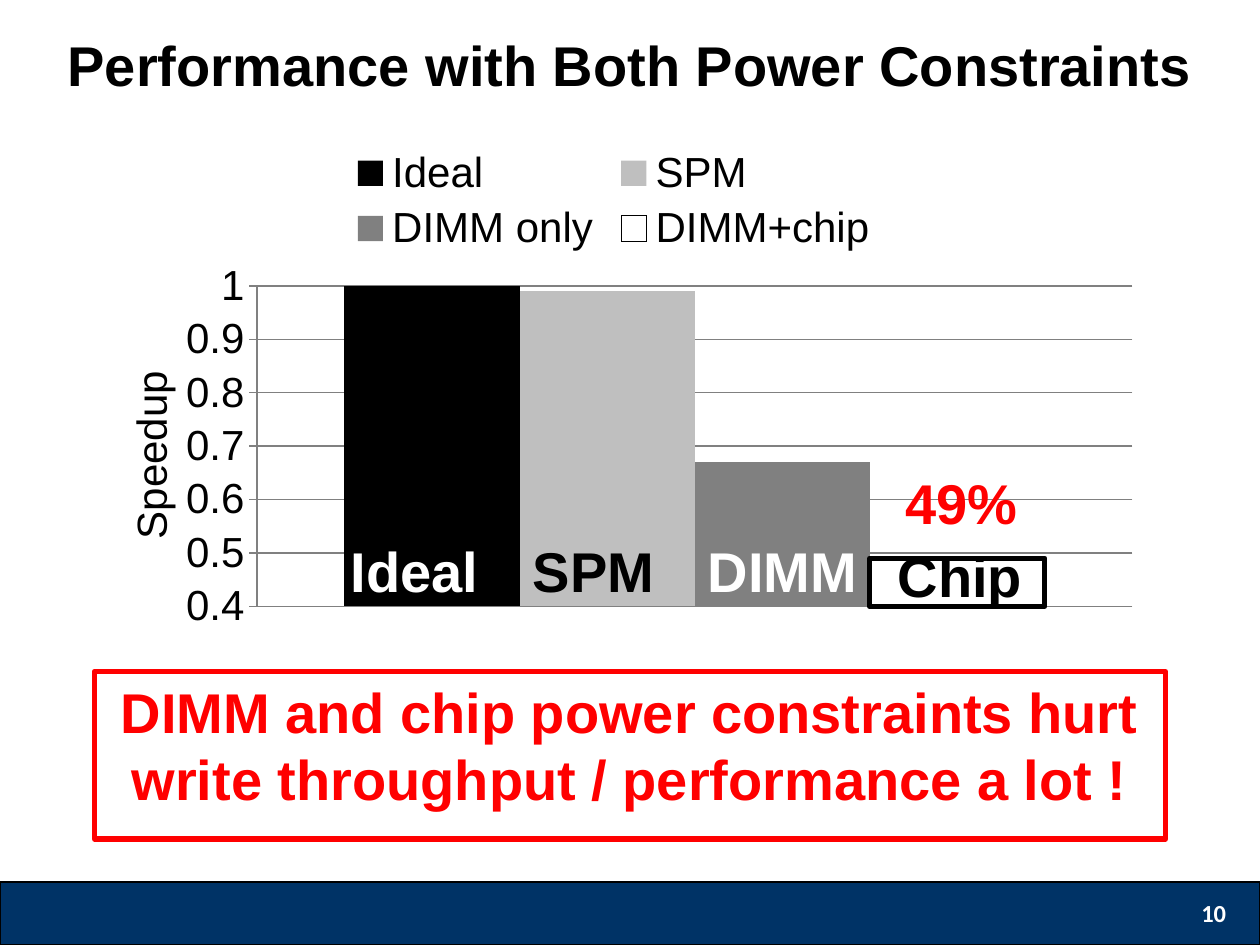
from lxml import etree
from pptx import Presentation
from pptx.chart.data import CategoryChartData
from pptx.dml.color import RGBColor
from pptx.enum.chart import XL_CHART_TYPE, XL_LEGEND_POSITION, XL_TICK_MARK
from pptx.enum.shapes import MSO_SHAPE
from pptx.enum.text import MSO_ANCHOR, PP_ALIGN
from pptx.oxml.ns import qn
from pptx.util import Inches, Pt

COLUMNS = XL_CHART_TYPE.COLUMN_CLUSTERED
LEGEND_TOP = XL_LEGEND_POSITION.TOP
CROSS = XL_TICK_MARK.CROSS
RECTANGLE = MSO_SHAPE.RECTANGLE
TOP, MIDDLE = MSO_ANCHOR.TOP, MSO_ANCHOR.MIDDLE
CENTER, RIGHT = PP_ALIGN.CENTER, PP_ALIGN.RIGHT

BLACK, WHITE, RED, NAVY, GRAY = "000000", "FFFFFF", "FF0000", "003366", "808080"
SPEEDUPS = [
    ("Ideal", 1, BLACK),
    ("SPM", 0.99, "BFBFBF"),
    ("DIMM only", 0.67, GRAY),
    ("DIMM+chip", 0.49, WHITE),
]
BAR_LABELS = [
    ("49%", RED, (6.92, 3.67, 1.42, 0.64)),
    ("Ideal", WHITE, (2.5, 4.21, 1.58, 0.64)),
    ("SPM", BLACK, (3.92, 4.21, 1.58, 0.64)),
    ("DIMM", WHITE, (5.42, 4.21, 1.58, 0.64)),
    ("Chip", BLACK, (6.83, 4.25, 1.58, 0.64)),
]


def color(value):
    return RGBColor.from_string(value)


def inches(box):
    return [Inches(length) for length in box]


def style_font(font, size, shade, bold=False, name="Arial"):
    font.name = name
    font.size = Pt(size)
    font.bold = bold
    font.color.rgb = color(shade)


def write(frame, text, shade, size=32, align=CENTER, anchor=TOP, name="Arial"):
    frame.word_wrap = True
    frame.vertical_anchor = anchor
    paragraph = frame.paragraphs[0]
    paragraph.text = text
    paragraph.alignment = align
    style_font(paragraph.font, size, shade, True, name)


def add_label(slide, box, text, shade, **style):
    label = slide.shapes.add_textbox(*inches(box))
    write(label.text_frame, text, shade, **style)


def add_panel(slide, box, fill, line, width):
    panel = slide.shapes.add_shape(RECTANGLE, *inches(box))
    panel.shadow.inherit = False
    panel.fill.solid()
    panel.fill.fore_color.rgb = color(fill)
    panel.line.color.rgb = color(line)
    panel.line.width = Pt(width)
    return panel


def set_layout(parent, index, **settings):
    for old in parent.findall(qn("c:layout")):
        parent.remove(old)
    layout = etree.Element(qn("c:layout"))
    manual = etree.SubElement(layout, qn("c:manualLayout"))
    for tag, value in settings.items():
        etree.SubElement(manual, qn(f"c:{tag}")).set("val", str(value))
    parent.insert(index, layout)


def add_speedup_chart(slide, box):
    data = CategoryChartData()
    data.categories = ["1"]
    for name, speedup, _ in SPEEDUPS:
        data.add_series(name, [speedup])
    chart = slide.shapes.add_chart(COLUMNS, *inches(box), data).chart
    style_font(chart.font, 24, BLACK)
    chart.has_title = False

    chart.has_legend = True
    legend = chart.legend
    legend.position = LEGEND_TOP
    legend.include_in_layout = False
    style_font(legend.font, 24, BLACK)

    plot = chart.plots[0]
    plot.gap_width = 100
    plot.overlap = 0
    plot.vary_by_categories = False
    for series, (_, _, shade) in zip(plot.series, SPEEDUPS):
        series.format.fill.solid()
        series.format.fill.fore_color.rgb = color(shade)
    outline = plot.series[-1].format.line
    outline.color.rgb = color(BLACK)
    outline.width = Pt(3)

    chart.category_axis.visible = False
    axis = chart.value_axis
    axis.minimum_scale, axis.maximum_scale, axis.major_unit = 0.4, 1, 0.1
    axis.major_tick_mark = CROSS
    axis.tick_labels.number_format = "General"
    axis.tick_labels.number_format_is_linked = False
    style_font(axis.tick_labels.font, 24, BLACK)
    axis.has_major_gridlines = True
    for rule in (axis.format.line, axis.major_gridlines.format.line):
        rule.color.rgb = color(GRAY)
        rule.width = Pt(0.75)
    title = axis.axis_title
    title.text_frame.text = "Speedup"
    style_font(title.text_frame.paragraphs[0].font, 24, BLACK)

    edges = {"xMode": "edge", "yMode": "edge"}
    plot_area = chart._chartSpace.chart.plotArea
    set_layout(plot_area, 0, layoutTarget="inner", **edges, x=0.17, y=0.31, w=0.81, h=0.62)
    set_layout(legend._element, 1, **edges, x=0.25, y=0.03, w=0.5, h=0.23)
    set_layout(title._element, 1, **edges, x=0.04, y=0.46)


def add_conclusion(slide, box):
    panel = add_panel(slide, box, WHITE, RED, 3)
    write(
        panel.text_frame,
        "DIMM and chip power constraints hurt write throughput / performance a lot !",
        RED,
    )


def add_footer(slide, box):
    left, top, width, _ = box
    add_panel(slide, box, NAVY, BLACK, 0.75)
    number_box = (left + width - 2.5, top + 0.08, 2.33, 0.4)
    add_label(slide, number_box, "10", WHITE, size=14, align=RIGHT, name="Calibri")


def main():
    deck = Presentation()
    deck.slide_width, deck.slide_height = Inches(10), Inches(7.5)
    slide = deck.slides.add_slide(deck.slide_layouts[6])
    add_footer(slide, (0, 7, 10, 0.5))
    add_speedup_chart(slide, (0.58, 1, 8.58, 4.1))
    add_label(
        slide,
        (0.25, 0.17, 9.5, 0.67),
        "Performance with Both Power Constraints",
        BLACK,
        anchor=MIDDLE,
    )
    add_conclusion(slide, (0.75, 5.33, 8.5, 1.33))
    for text, shade, box in BAR_LABELS:
        add_label(slide, box, text, shade)
    deck.save("out.pptx")


if __name__ == "__main__":
    main()
